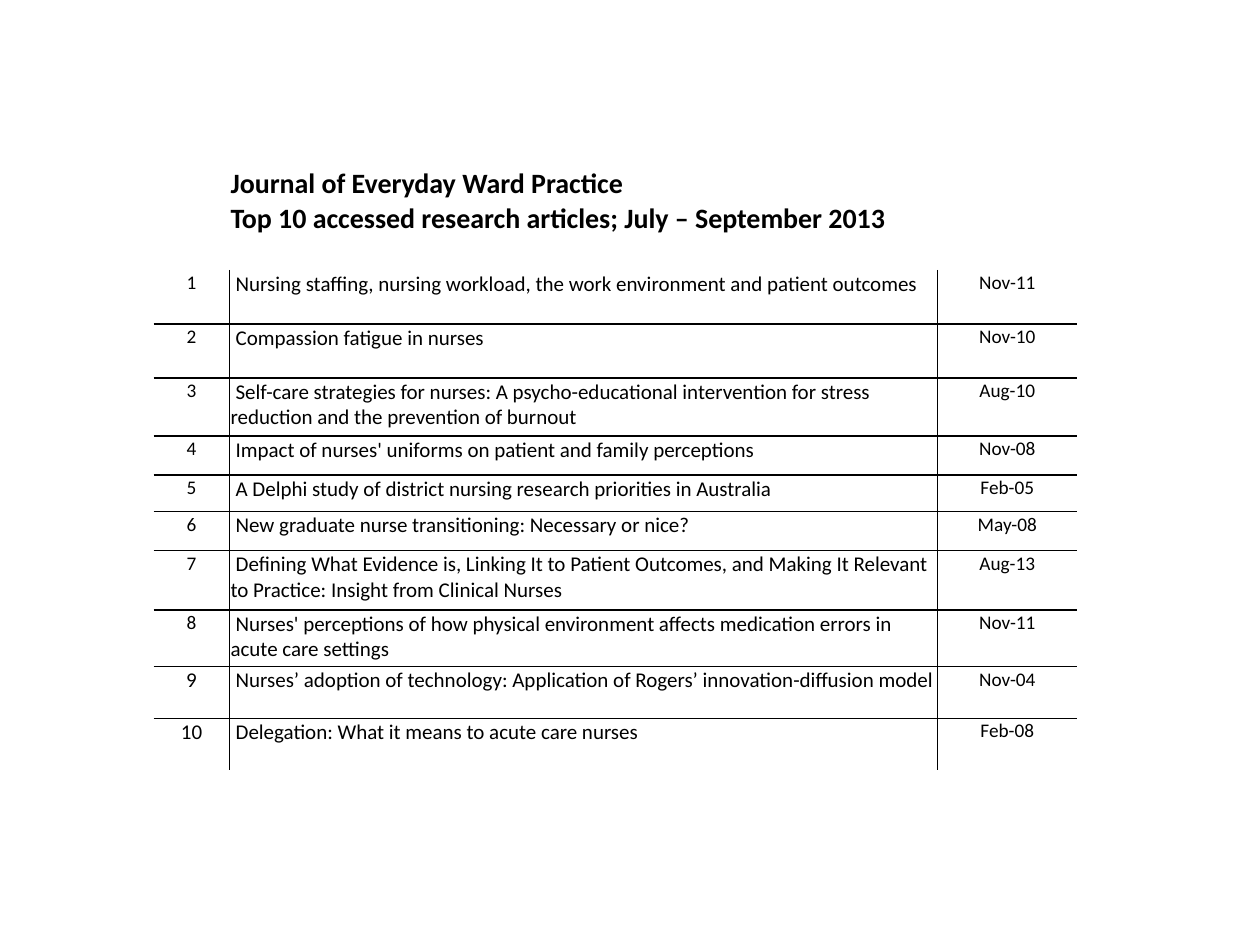
"""Build a slide listing the ten most accessed nursing research articles."""
import dataclasses

import lxml.etree
import pptx
import pptx.dml.color
import pptx.enum.text
import pptx.oxml.ns
import pptx.util

Inches = pptx.util.Inches
Pt = pptx.util.Pt
Align = pptx.enum.text.PP_ALIGN
Anchor = pptx.enum.text.MSO_ANCHOR


@dataclasses.dataclass(frozen=True)
class Theme:
    font: str = "Calibri"
    ink: str = "000000"
    heading_size: int = 16
    article_size: int = 12
    detail_size: int = 11
    rule_width: int = 1
    inset: float = 0.01
    first_line: float = 0.04
    table_style: str = "{2D5ABB26-0587-4C30-8999-92F81FD0307C}"


HEADINGS = [
    ("Journal of Everyday Ward Practice", Anchor.BOTTOM),
    ("Top 10 accessed research articles; July – September 2013", Anchor.TOP),
]
ARTICLES = [
    ("Nursing staffing, nursing workload, the work environment and patient outcomes", "Nov-11"),
    ("Compassion fatigue in nurses", "Nov-10"),
    ("Self-care strategies for nurses: A psycho-educational intervention for stress "
     "reduction and the prevention of burnout", "Aug-10"),
    ("Impact of nurses' uniforms on patient and family perceptions", "Nov-08"),
    ("A Delphi study of district nursing research priorities in Australia", "Feb-05"),
    ("New graduate nurse transitioning: Necessary or nice?", "May-08"),
    ("Defining What Evidence is, Linking It to Patient Outcomes, and Making It Relevant "
     "to Practice: Insight from Clinical Nurses", "Aug-13"),
    ("Nurses' perceptions of how physical environment affects medication errors in "
     "acute care settings", "Nov-11"),
    ("Nurses’ adoption of technology: Application of Rogers’ innovation-diffusion model", "Nov-04"),
    ("Delegation: What it means to acute care nurses", "Feb-08"),
]
COLUMN_WIDTHS = [0.6, 5.62, 1.11]
ROW_HEIGHTS = [0.28, 0.55, 0.43, 0.43, 0.46, 0.31, 0.29, 0.31, 0.47, 0.45, 0.41, 0.41]


class SlideBuilder:
    def __init__(self, slide, theme):
        self.slide = slide
        self.theme = theme

    def table(self, left, top, widths, heights):
        frame = self.slide.shapes.add_table(
            len(heights), len(widths), Inches(left), Inches(top),
            Inches(sum(widths)), Inches(sum(heights)))
        table = frame.table
        table.first_row = table.horz_banding = False
        style = table._tbl.tblPr.find(pptx.oxml.ns.qn("a:tableStyleId"))
        style.text = self.theme.table_style
        for column, width in zip(table.columns, widths):
            column.width = Inches(width)
        for row, height in zip(table.rows, heights):
            row.height = Inches(height)
        return table

    def cell(self, cell, text, size, align=Align.LEFT, anchor=Anchor.TOP,
             bold=False, indent=0, sides=""):
        inset = Inches(self.theme.inset)
        cell.margin_left = cell.margin_right = cell.margin_top = inset
        cell.margin_bottom = 0
        cell.vertical_anchor = anchor
        self.borders(cell, sides)
        cell.fill.background()
        para = cell.text_frame.paragraphs[0]
        para.alignment = align
        para._p.get_or_add_pPr().set("indent", str(Inches(indent)))
        if not text:
            para._p.get_or_add_endParaRPr().set("sz", str(size * 100))
            return
        span = para.add_run()
        span.text = text
        span.font.name = self.theme.font
        span.font.size = Pt(size)
        span.font.bold = bold
        span.font.color.rgb = pptx.dml.color.RGBColor.from_string(self.theme.ink)

    def borders(self, cell, sides):
        qn = pptx.oxml.ns.qn
        properties = cell._tc.get_or_add_tcPr()
        for side in "LRTB":
            if side in sides:
                line = lxml.etree.SubElement(
                    properties, qn(f"a:ln{side}"), w=str(Pt(self.theme.rule_width)))
                fill = lxml.etree.SubElement(line, qn("a:solidFill"))
                lxml.etree.SubElement(fill, qn("a:srgbClr"), val=self.theme.ink)


def main():
    theme = Theme()
    deck = pptx.Presentation()
    deck.slide_width, deck.slide_height = Inches(10), Inches(7.5)
    builder = SlideBuilder(deck.slides.add_slide(deck.slide_layouts[6]), theme)
    table = builder.table(1.22, 1.31, COLUMN_WIDTHS, ROW_HEIGHTS)

    for row, (heading, anchor) in enumerate(HEADINGS):
        for column, text in enumerate(["", heading, ""]):
            builder.cell(table.cell(row, column), text, theme.heading_size,
                         anchor=anchor, bold=True)

    for rank, (title, date) in enumerate(ARTICLES, start=1):
        row = len(HEADINGS) + rank - 1
        rules = ("T" if rank > 1 else "") + ("B" if rank < len(ARTICLES) else "")
        rank_size = theme.detail_size if rank < 9 else theme.article_size
        builder.cell(table.cell(row, 0), str(rank), rank_size, Align.CENTER, sides="R" + rules)
        builder.cell(table.cell(row, 1), title, theme.article_size,
                     indent=theme.first_line, sides="LR" + rules)
        builder.cell(table.cell(row, 2), date, theme.detail_size, Align.CENTER, sides="L" + rules)

    deck.save("out.pptx")


if __name__ == "__main__":
    main()
